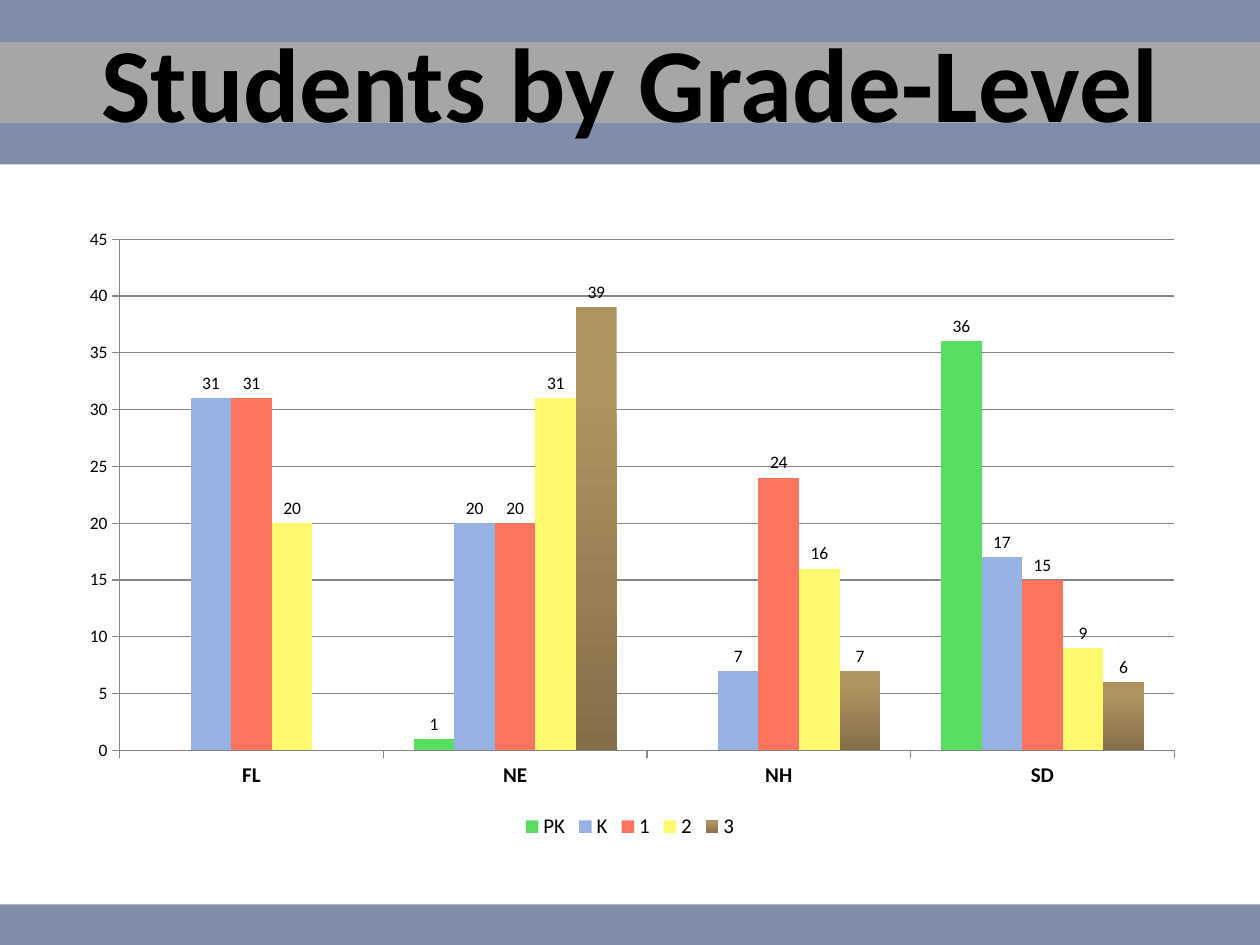
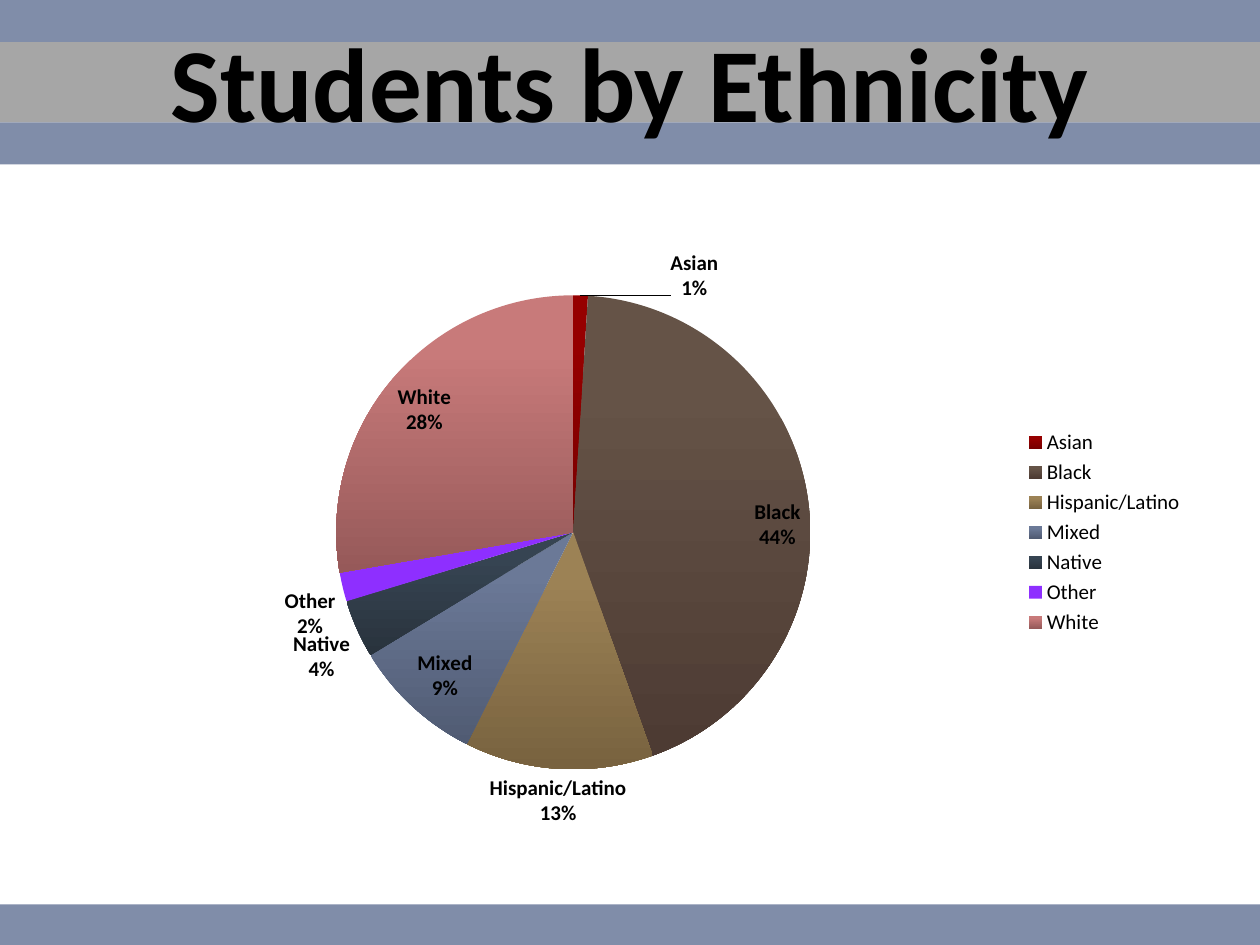
from lxml import etree
from pptx import Presentation
from pptx.chart.data import CategoryChartData
from pptx.dml.color import RGBColor
from pptx.enum.chart import XL_CHART_TYPE, XL_LABEL_POSITION, XL_LEGEND_POSITION
from pptx.enum.shapes import MSO_SHAPE
from pptx.enum.text import MSO_ANCHOR, PP_ALIGN
from pptx.oxml import parse_xml
from pptx.oxml.ns import nsdecls, qn
from pptx.util import Pt

COLUMN, PIE = XL_CHART_TYPE.COLUMN_CLUSTERED, XL_CHART_TYPE.PIE
BOTTOM, RIGHT = XL_LEGEND_POSITION.BOTTOM, XL_LEGEND_POSITION.RIGHT
INSIDE, OUTSIDE = XL_LABEL_POSITION.INSIDE_END, XL_LABEL_POSITION.OUTSIDE_END
RECT = MSO_SHAPE.RECTANGLE
MIDDLE, CENTER = MSO_ANCHOR.MIDDLE, PP_ALIGN.CENTER

FONT = "Calibri"
COLORS = {"blue": "808DA9", "gray": "A6A6A6", "text": "000000", "grid": "868686"}
WIDTH, HEIGHT = 720, 540
BANDS = [(0, 24, "blue"), (24, 46, "gray"), (70, 24, "blue"), (516.75, 23.25, "blue")]
TITLE_BOX = (36, 21.6, 648, 49)
CHART_BOX = (36, 126, 648, 356.4)

STATES = ["FL", "NE", "NH", "SD"]
# Grade, students by state, fill (one colour, or top and bottom of a gradient)
GRADES = [
    ("PK", [None, 1, None, 36], ["57DE5F"]),
    ("K", [31, 20, 7, 17], ["95B2E3"]),
    ("1", [31, 20, 24, 15], ["FF7461"]),
    ("2", [20, 31, 16, 9], ["FFF96D"]),
    ("3", [None, 39, 7, 6], ["AE9361", "866E49"]),
]
# Group, share, fill, label place
GROUPS = [
    ("Asian", 1, ["960000", "780000"], OUTSIDE),
    ("Black", 44, ["655347", "4D3B33"], INSIDE),
    ("Hispanic/Latino", 13, ["9C8255", "78623F"], OUTSIDE),
    ("Mixed", 9, ["6B7997", "505B73"], INSIDE),
    ("Native", 4, ["364452", "29333D"], OUTSIDE),
    ("Other", 2, ["8E2FFF"], OUTSIDE),
    ("White", 28, ["C87A7A", "965959"], INSIDE),
]
PIE_FLAGS = {"showVal": "0", "showCatName": "1", "showPercent": "1"}


def rgb(code):
    return RGBColor.from_string(code)


def paint(fill, shades):
    """Fill with one colour, or with a gradient from top to bottom."""
    if len(shades) == 1:
        fill.solid()
        fill.fore_color.rgb = rgb(shades[0])
        return
    fill.gradient()
    fill.gradient_angle = 270
    for stop, shade, place in zip(fill.gradient_stops, shades, (0.2, 1)):
        stop.color.rgb = rgb(shade)
        stop.position = place


def style(font, size, bold=False):
    font.name, font.size, font.bold = FONT, Pt(size), bold
    font.color.rgb = rgb(COLORS["text"])


def layout(kind, **parts):
    """Build a manual chart layout from fractions of the chart."""
    body = "".join(f'<c:{key} val="{val}"/>' for key, val in parts.items())
    return parse_xml(f'<c:layout {nsdecls("c")}><c:manualLayout>{kind}{body}'
                     "</c:manualLayout></c:layout>")


def add_page(deck, title):
    page = deck.slides.add_slide(deck.slide_layouts[6])
    for top, high, color in BANDS:
        band = page.shapes.add_shape(RECT, 0, Pt(top), Pt(WIDTH), Pt(high))
        band.shadow.inherit = False
        paint(band.fill, [COLORS[color]])
        band.line.fill.background()
    return page, title


def add_title(page, title):
    frame = page.shapes.add_textbox(*map(Pt, TITLE_BOX)).text_frame
    frame.word_wrap = True
    frame.vertical_anchor = MIDDLE
    line = frame.paragraphs[0]
    line.text, line.alignment = title, CENTER
    style(line.font, 60, True)


def add_chart(page, kind, data, side, area):
    """Add a chart whose plot fills the area (x, y, w, h as fractions)."""
    chart = page.shapes.add_chart(kind, *map(Pt, CHART_BOX), data).chart
    style(chart.font, 10)
    chart.has_title = False
    chart.has_legend = True
    chart.legend.position = side
    chart.legend.include_in_layout = False
    style(chart.legend.font, 12)
    plot = chart._chartSpace.chart.plotArea
    for old in plot.findall(qn("c:layout")):
        plot.remove(old)
    modes = ('<c:layoutTarget val="inner"/><c:xMode val="edge"/>'
             '<c:yMode val="edge"/>')
    plot.insert(0, layout(modes, **dict(zip("xywh", area))))
    return chart


def add_columns(page):
    data = CategoryChartData()
    data.categories = STATES
    for name, counts, _ in GRADES:
        data.add_series(name, counts)
    chart = add_chart(page, COLUMN, data, BOTTOM, (0.05, 0.03, 0.93, 0.82))
    plot = chart.plots[0]
    plot.gap_width, plot.overlap, plot.vary_by_categories = 150, 0, False
    for series, (_, _, shades) in zip(plot.series, GRADES):
        paint(series.format.fill, shades)
        labels = series.data_labels
        labels.show_value, labels.position = True, OUTSIDE
        style(labels.font, 10)
    across, up = chart.category_axis, chart.value_axis
    up.minimum_scale, up.maximum_scale, up.major_unit = 0, 45, 5
    up.has_major_gridlines = True
    for line in (across.format.line, up.format.line, up.major_gridlines.format.line):
        line.color.rgb, line.width = rgb(COLORS["grid"]), Pt(0.75)
    style(across.tick_labels.font, 12, True)
    style(up.tick_labels.font, 10)


def add_pie(page):
    data = CategoryChartData()
    data.categories = [group[0] for group in GROUPS]
    data.add_series("Series 1", [group[1] for group in GROUPS])
    chart = add_chart(page, PIE, data, RIGHT, (0.24, 0.12, 0.42, 0.76))
    plot = chart.plots[0]
    plot.vary_by_categories = True
    series = plot.series[0]
    style(series.data_labels.font, 12, True)
    for i, (_, _, shades, place) in enumerate(GROUPS):
        point = series.points[i]
        paint(point.format.fill, shades)
        point.data_label.position = place
        style(point.data_label.font, 12, True)
    root = series._element
    for flag, val in PIE_FLAGS.items():
        for node in root.iter(qn(f"c:{flag}")):
            node.set("val", val)
    for node in list(root.iter(qn("c:showBubbleSize"))):
        gap = etree.Element(qn("c:separator"))
        gap.text = "\n"
        node.addnext(gap)
    asian = next(root.iter(qn("c:dLbl")))
    asian.find(qn("c:idx")).addnext(layout("", x=0.1, y=0.02))


def main():
    deck = Presentation()
    deck.slide_width, deck.slide_height = Pt(WIDTH), Pt(HEIGHT)
    pages = [("Students by Grade-Level", add_columns), ("Students by Ethnicity", add_pie)]
    for title, draw in pages:
        page, title = add_page(deck, title)
        draw(page)
        add_title(page, title)
    deck.save("out.pptx")


if __name__ == "__main__":
    main()
